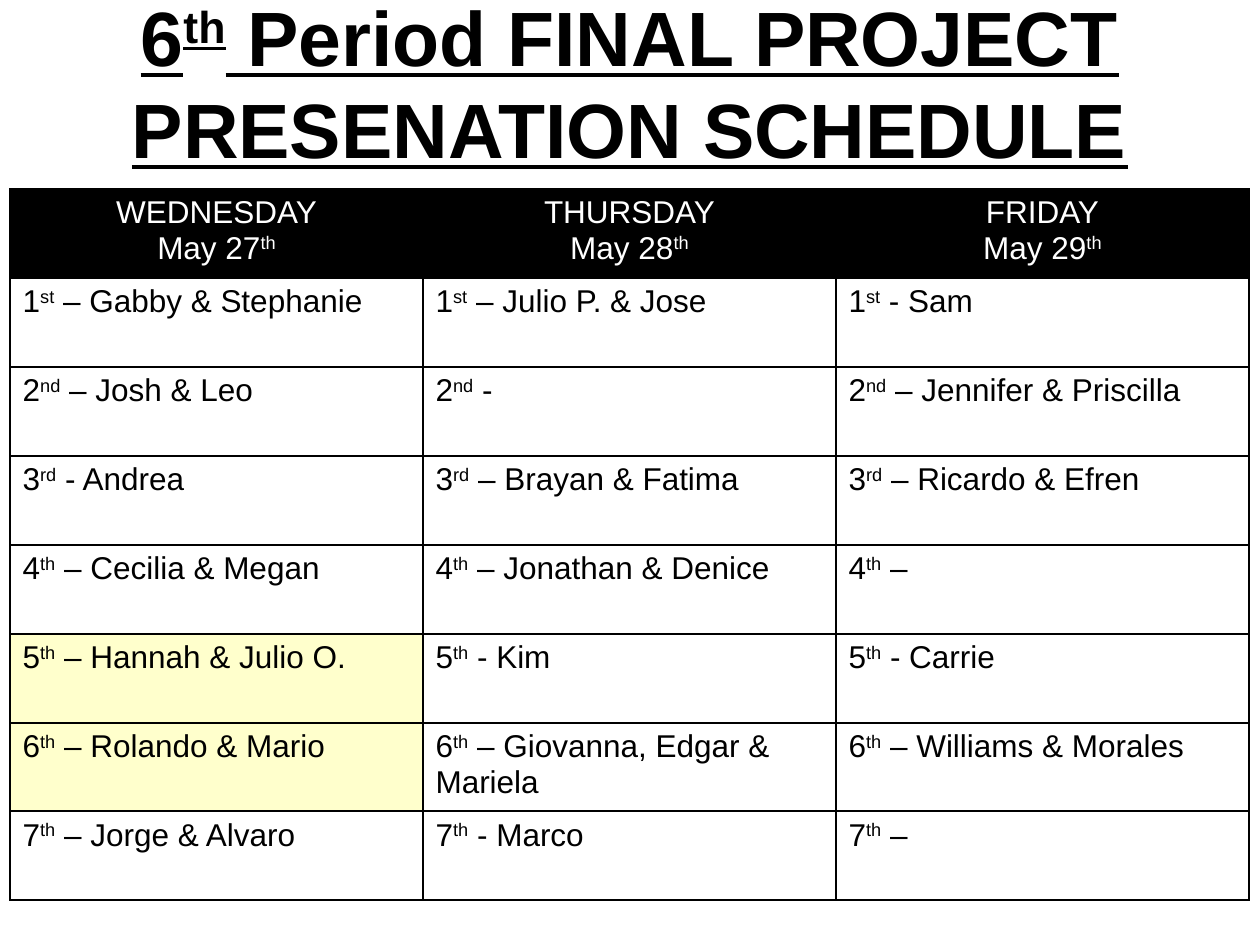
from lxml import etree
from pptx import Presentation
from pptx.dml.color import RGBColor
from pptx.enum.text import MSO_ANCHOR, PP_ALIGN
from pptx.oxml.ns import qn
from pptx.util import Emu, Pt

CENTER = PP_ALIGN.CENTER
LEFT = PP_ALIGN.LEFT
MIDDLE = MSO_ANCHOR.MIDDLE
PX_PER_INCH = 126
FONT = "Arial"
COLORS = {"black": "000000", "white": "FFFFFF", "highlight": "FFFFCC"}

TITLE = ["6^th^ Period FINAL PROJECT", "PRESENATION SCHEDULE"]
DAYS = [("WEDNESDAY", "May 27^th^"), ("THURSDAY", "May 28^th^"), ("FRIDAY", "May 29^th^")]
SLOTS = [
    ("1^st^", "– Gabby & Stephanie", "– Julio P. & Jose", "- Sam"),
    ("2^nd^", "– Josh & Leo", "-", "– Jennifer & Priscilla"),
    ("3^rd^", "- Andrea", "– Brayan & Fatima", "– Ricardo & Efren"),
    ("4^th^", "– Cecilia & Megan", "– Jonathan & Denice", "–"),
    ("5^th^", "– Hannah & Julio O.", "- Kim", "- Carrie"),
    ("6^th^", "– Rolando & Mario", "– Giovanna, Edgar & Mariela", "– Williams & Morales"),
    ("7^th^", "– Jorge & Alvaro", "- Marco", "–"),
]
HIGHLIGHTED = {(5, 0), (6, 0)}
ROW_HEIGHTS = [89, 89, 89, 89, 89, 89, 86, 89]
COLUMN_WIDTH = 413


def px(length):
    """Turn a length in px into EMU."""
    return Emu(round(length * 914400 / PX_PER_INCH))


def write_lines(text_frame, lines, size, color, align, title=False):
    """Write one paragraph per line, raising the parts between carets."""
    text_frame.text = "\n".join(line.replace("^", "") for line in lines)
    for paragraph, line in zip(text_frame.paragraphs, lines):
        paragraph.alignment = align
        paragraph.clear()
        for index, part in enumerate(line.split("^")):
            run = paragraph.add_run()
            run.text = part
            run.font.name = FONT
            run.font.size = Pt(size)
            run.font.bold = title
            run.font.underline = title
            run.font.color.rgb = RGBColor.from_string(COLORS[color])
            if index % 2:
                run.font._element.set("baseline", "30000")


def add_title(slide):
    """Add the centred slide title."""
    box = slide.shapes.add_textbox(px(0), px(38), px(1260), px(88))
    box.text_frame.word_wrap = True
    box.text_frame.vertical_anchor = MIDDLE
    write_lines(box.text_frame, TITLE, 44, "black", CENTER, title=True)


def set_borders(cell):
    """Draw a thin black line on all four sides of a cell."""
    properties = cell._tc.get_or_add_tcPr()
    for index, side in enumerate(("a:lnL", "a:lnR", "a:lnT", "a:lnB")):
        line = etree.Element(qn(side), w=str(Pt(1)))
        fill = etree.SubElement(line, qn("a:solidFill"))
        etree.SubElement(fill, qn("a:srgbClr"), val=COLORS["black"])
        properties.insert(index, line)


def fill_cell(cell, lines, color, align, fill=None):
    """Write a cell and set its fill and borders."""
    write_lines(cell.text_frame, lines, 18, color, align)
    if fill:
        cell.fill.solid()
        cell.fill.fore_color.rgb = RGBColor.from_string(COLORS[fill])
    else:
        cell.fill.background()
    set_borders(cell)


def add_schedule(slide):
    """Add the table of presentation days and slots."""
    frame = slide.shapes.add_table(
        len(ROW_HEIGHTS), len(DAYS), px(10), px(189),
        px(COLUMN_WIDTH * len(DAYS)), px(sum(ROW_HEIGHTS)))
    table = frame.table
    table.first_row = False
    table.horz_banding = False
    for row, height in zip(table.rows, ROW_HEIGHTS):
        row.height = px(height)
    for column, day in enumerate(DAYS):
        table.columns[column].width = px(COLUMN_WIDTH)
        fill_cell(table.cell(0, column), day, "white", CENTER, "black")
        for row, (ordinal, *names) in enumerate(SLOTS, start=1):
            fill = "highlight" if (row, column) in HIGHLIGHTED else None
            fill_cell(table.cell(row, column), [f"{ordinal} {names[column]}"], "black", LEFT, fill)


def main():
    """Build and save the schedule slide."""
    presentation = Presentation()
    presentation.slide_width = px(1260)
    presentation.slide_height = px(945)
    slide = presentation.slides.add_slide(presentation.slide_layouts[6])
    add_title(slide)
    add_schedule(slide)
    presentation.save("out.pptx")


if __name__ == "__main__":
    main()
